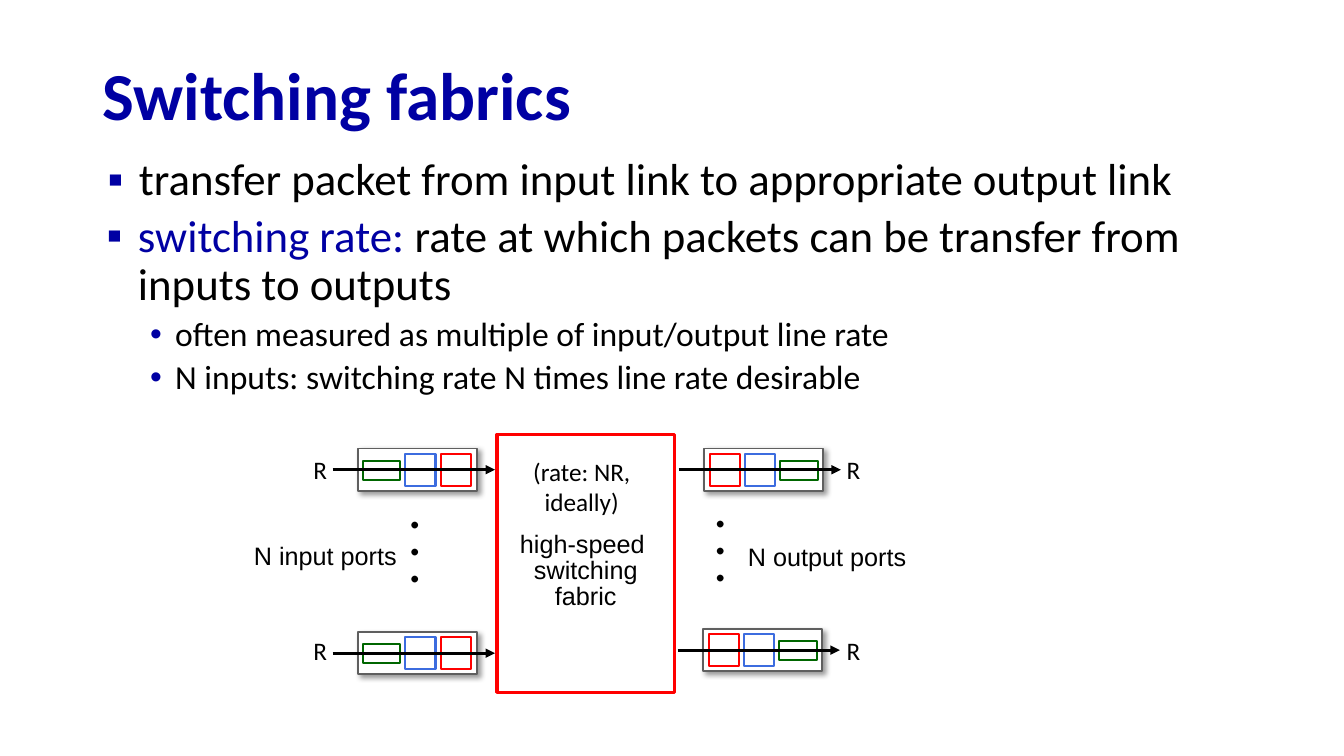
from lxml.etree import SubElement
from pptx import Presentation
from pptx.dml.color import RGBColor
from pptx.enum.shapes import MSO_CONNECTOR as Connector, MSO_SHAPE as Preset
from pptx.enum.text import MSO_ANCHOR as Anchor, PP_ALIGN as Align
from pptx.oxml.ns import qn
from pptx.util import Inches, Pt

COLORS = {
    "navy": "0000A3",
    "black": "000000",
    "white": "FFFFFF",
    "red": "FF0000",
    "blue": "3C6CDF",
    "green": "006600",
    "gray": "5F5F5F",
}
QUEUE_WIDTH, QUEUE_HEIGHT = 1.18, 0.42
PACKETS = [
    ("green", 0.76, 0.12, 0.37, 0.19),
    ("blue", 0.41, 0.05, 0.3, 0.32),
    ("red", 0.06, 0.05, 0.3, 0.32),
]


def color(name):
    return RGBColor.from_string(COLORS[name])


def set_font(font, size, name="Calibri", fill="black", bold=False):
    font.size, font.name, font.bold = Pt(size), name, bold
    font.color.rgb = color(fill)


def add_box(slide, left, top, width, height, wrap=True):
    box = slide.shapes.add_textbox(Inches(left), Inches(top), Inches(width), Inches(height))
    box.text_frame.word_wrap = wrap
    return box


def add_label(slide, lines, left, top, width, height, size=18, name="Calibri",
              fill="black", bold=False, align=Align.LEFT, spacing=1.0, wrap=False):
    box = add_box(slide, left, top, width, height, wrap)
    frame = box.text_frame
    for index, line in enumerate(lines):
        paragraph = frame.add_paragraph() if index else frame.paragraphs[0]
        paragraph.text = line
        paragraph.alignment = align
        paragraph.line_spacing = spacing
        set_font(paragraph.font, size, name, fill, bold)
    return box


def add_bullet(paragraph, runs, level=0):
    margin, indent, before, size, symbol = [
        (0.39, -0.31, 10, 32, "▪"),
        (0.76, -0.25, 5, 24, "•"),
    ][level]
    paragraph.level = level
    paragraph.line_spacing = 0.9
    paragraph.space_before = Pt(before)
    for text, fill in runs:
        run = paragraph.add_run()
        run.text = text
        set_font(run.font, size, fill=fill)
    properties = paragraph._p.get_or_add_pPr()
    properties.set("marL", str(Inches(margin)))
    properties.set("indent", str(Inches(indent)))
    bullet_color = SubElement(properties, qn("a:buClr"))
    SubElement(bullet_color, qn("a:srgbClr"), val=COLORS["navy"])
    SubElement(properties, qn("a:buFont"), typeface="Arial")
    SubElement(properties, qn("a:buChar"), char=symbol)


def add_bullets(slide, bullets, left, top, width, height):
    frame = add_box(slide, left, top, width, height).text_frame
    for index, (runs, level) in enumerate(bullets):
        paragraph = frame.add_paragraph() if index else frame.paragraphs[0]
        add_bullet(paragraph, runs, level)


def add_rectangle(slide, left, top, width, height, outline, weight):
    shape = slide.shapes.add_shape(
        Preset.RECTANGLE, Inches(left), Inches(top), Inches(width), Inches(height))
    shape.shadow.inherit = False
    shape.fill.solid()
    shape.fill.fore_color.rgb = color("white")
    shape.line.color.rgb = color(outline)
    shape.line.width = Pt(weight)
    return shape


def add_drop_shadow(shape):
    effects = shape._element.spPr.find(qn("a:effectLst"))
    shadow = SubElement(effects, qn("a:outerShdw"), blurRad=str(Pt(4)),
                        dist=str(Pt(3)), dir="2700000", algn="tl", rotWithShape="0")
    shade = SubElement(shadow, qn("a:srgbClr"), val=COLORS["black"])
    SubElement(shade, qn("a:alpha"), val="40000")


def add_arrow(slide, left, y, length):
    arrow = slide.shapes.add_connector(
        Connector.STRAIGHT, Inches(left), Inches(y), Inches(left + length), Inches(y))
    arrow.line.color.rgb = color("black")
    arrow.line.width = Pt(2.25)
    SubElement(arrow.line._get_or_add_ln(), qn("a:tailEnd"), type="triangle")
    SubElement(arrow._element.spPr, qn("a:effectLst"))


def add_queue(slide, left, top, mirrored):
    add_drop_shadow(add_rectangle(slide, left, top, QUEUE_WIDTH, QUEUE_HEIGHT, "gray", 1.25))
    for outline, x, y, width, height in PACKETS:
        offset = QUEUE_WIDTH - width - x if mirrored else x
        add_rectangle(slide, left + offset, top + y, width, height, outline, 1.5)
    add_arrow(slide, left - 0.25, top + QUEUE_HEIGHT / 2, 1.61)


def add_ellipsis(slide, left, top):
    box = add_label(slide, [". . . "], left, top, 1.01, 0.77, size=40,
                    align=Align.CENTER, wrap=True)
    box.rotation = 90


def main():
    presentation = Presentation()
    presentation.slide_width, presentation.slide_height = Inches(13.33), Inches(7.5)
    slide = presentation.slides.add_slide(presentation.slide_layouts[6])

    title = add_label(slide, ["Switching fabrics"], 0.92, 0.49, 11.5, 0.98, size=48,
                      fill="navy", bold=True, spacing=0.9, wrap=True)
    title.text_frame.vertical_anchor = Anchor.MIDDLE
    add_bullets(slide, [
        ([("transfer packet from input link to appropriate output link", "black")], 0),
    ], 0.89, 1.51, 12.07, 0.69)
    add_bullets(slide, [
        ([("switching rate: ", "navy"),
          ("rate at which packets can be transfer from inputs to outputs", "black")], 0),
        ([("often measured as multiple of input/output line rate", "black")], 1),
        ([("N inputs: switching rate N times line rate desirable", "black")], 1),
    ], 0.88, 2.07, 12.07, 2.53)

    add_rectangle(slide, 4.93, 4.31, 1.76, 2.56, "red", 2.25)
    add_label(slide, ["high-speed ", "switching", "fabric"], 5.05, 5.24, 1.52, 0.87,
              name="Arial", align=Align.CENTER, spacing=0.85)
    add_label(slide, ["(rate: NR, ideally)"], 5.04, 4.48, 1.46, 0.71,
              align=Align.CENTER, wrap=True)

    for left, top, mirrored in [(3.55, 4.45, True), (3.55, 6.27, True),
                                (6.98, 4.45, False), (6.97, 6.24, False)]:
        add_queue(slide, left, top, mirrored)
    for left in (3.01, 8.3):
        for top in (4.46, 6.25):
            add_label(slide, ["R"], left, top, 0.34, 0.4)

    add_label(slide, ["N input ports"], 2.42, 5.31, 1.63, 0.4, name="Arial")
    add_label(slide, ["N output ports"], 7.32, 5.32, 1.79, 0.4, name="Arial")
    add_ellipsis(slide, 3.8, 5.16)
    add_ellipsis(slide, 6.83, 5.15)

    presentation.save("out.pptx")


if __name__ == "__main__":
    main()
